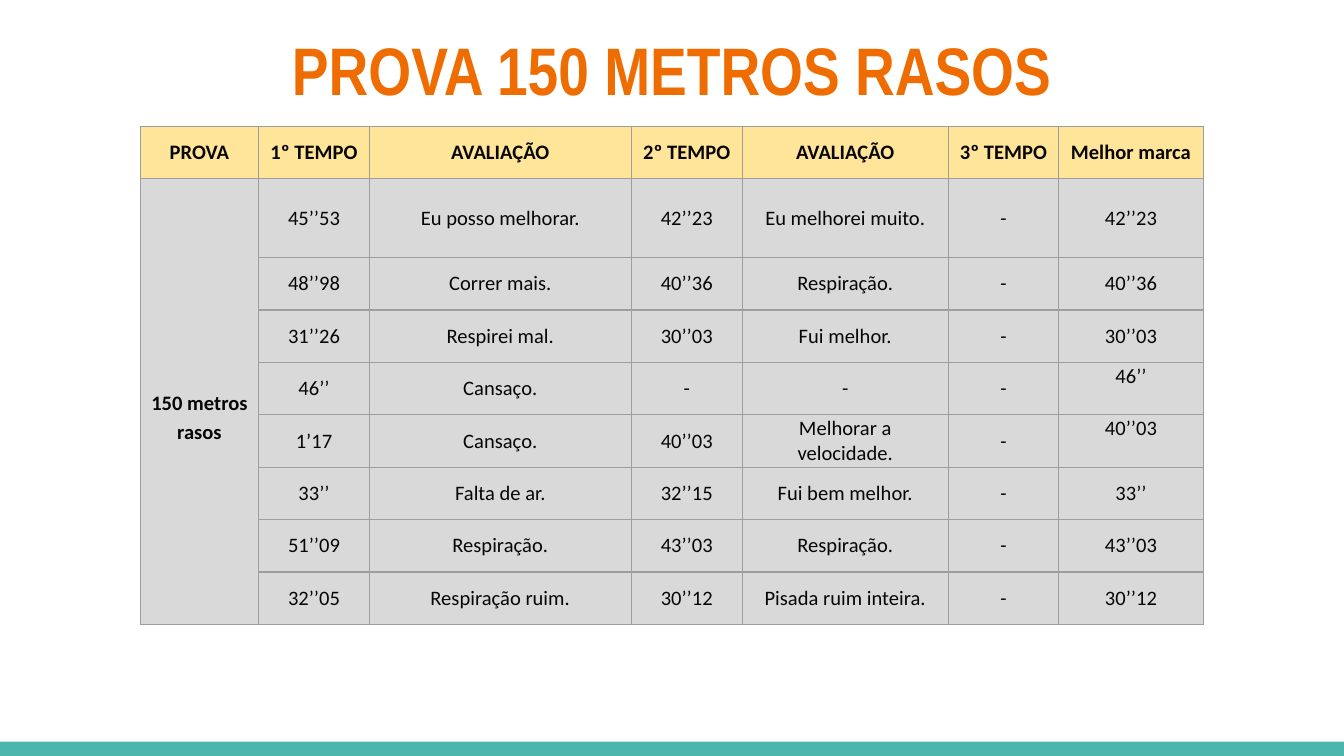
from lxml.etree import fromstring
from pptx import Presentation
from pptx.dml.color import RGBColor as RGB
from pptx.enum.shapes import MSO_SHAPE as SHAPE
from pptx.enum.text import MSO_ANCHOR as ANCHOR, PP_ALIGN as ALIGN
from pptx.util import Cm, Pt

TITLE = "PROVA 150 METROS RASOS"
HEADERS = ["PROVA", "1º TEMPO", "AVALIAÇÃO", "2º TEMPO", "AVALIAÇÃO",
           "3º TEMPO", "Melhor marca"]
EVENT = "150 metros rasos"
RESULTS = [
    ("45’’53", "Eu posso melhorar.", "42’’23", "Eu melhorei muito.", "-", "42’’23"),
    ("48’’98", "Correr mais.", "40’’36", "Respiração.", "-", "40’’36"),
    ("31’’26", "Respirei mal.", "30’’03", "Fui melhor.", "-", "30’’03"),
    ("46’’", "Cansaço.", "-", "-", "-", "46’’"),
    ("1’17", "Cansaço.", "40’’03", "Melhorar a velocidade.", "-", "40’’03"),
    ("33’’", "Falta de ar.", "32’’15", "Fui bem melhor.", "-", "33’’"),
    ("51’’09", "Respiração.", "43’’03", "Respiração.", "-", "43’’03"),
    ("32’’05", "Respiração ruim.", "30’’12", "Pisada ruim inteira.", "-", "30’’12"),
]

COLORS = {"title": "EF6C00", "text": "070605", "header": "FFE599",
          "body": "D9D9D9", "border": "9E9E9E", "footer": "4DB6AC"}
TITLE_FONT = {"name": "Arial Narrow", "size": Pt(36), "bold": True}
HEADER_FONT = {"name": "Calibri", "size": Pt(11), "bold": True}
BODY_FONT = {**HEADER_FONT, "bold": False}
CELL_FORMAT = {"vertical_anchor": ANCHOR.MIDDLE, "margin_left": Cm(0.2),
               "margin_right": Cm(0.2), "margin_top": 0, "margin_bottom": 0}
RAISED = {"margin_bottom": Cm(0.47)}
LOWERED = {"margin_top": Cm(0.54)}
RAISED_CELLS = {(4, 6), (5, 6)}

SLIDE_W, SLIDE_H = 25.4, 14.29
FOOTER_H = 0.27
TABLE_LEFT, TABLE_TOP = 2.65, 2.39
COLUMN_WIDTHS = [2.24, 2.09, 4.95, 2.1, 3.89, 2.09, 2.73]
ROW_HEIGHT, TALL_ROW = 0.99, 1.49
ROW_HEIGHTS = [ROW_HEIGHT, TALL_ROW] + [ROW_HEIGHT] * (len(RESULTS) - 1)
DRAWING_NS = "http://schemas.openxmlformats.org/drawingml/2006/main"


def apply(target, formats):
    for attribute, value in formats.items():
        setattr(target, attribute, value)


def write(frame, text, font, color):
    """Put one centred paragraph into a text frame."""
    paragraph = frame.paragraphs[0]
    paragraph.alignment = ALIGN.CENTER
    run = paragraph.add_run()
    run.text = text
    apply(run.font, font)
    run.font.color.rgb = RGB.from_string(COLORS[color])
    return paragraph


def add_borders(cell):
    properties = cell._tc.get_or_add_tcPr()
    for position, side in enumerate("LRTB"):
        properties.insert(position, fromstring(
            f'<a:ln{side} xmlns:a="{DRAWING_NS}" w="{Pt(0.75)}"><a:solidFill>'
            f'<a:srgbClr val="{COLORS["border"]}"/></a:solidFill></a:ln{side}>'))


def paint(fill, color):
    fill.solid()
    fill.fore_color.rgb = RGB.from_string(COLORS[color])


def add_results_table(slide):
    rows = [HEADERS] + [(EVENT if i == 0 else "", *result)
                        for i, result in enumerate(RESULTS)]
    table = slide.shapes.add_table(
        len(rows), len(HEADERS), Cm(TABLE_LEFT), Cm(TABLE_TOP),
        Cm(sum(COLUMN_WIDTHS)), Cm(sum(ROW_HEIGHTS))).table
    for column, width in zip(table.columns, COLUMN_WIDTHS):
        column.width = Cm(width)
    for row, height in zip(table.rows, ROW_HEIGHTS):
        row.height = Cm(height)

    for r, row in enumerate(rows):
        for c, text in enumerate(row):
            cell = table.cell(r, c)
            apply(cell, CELL_FORMAT)
            if (r, c) in RAISED_CELLS:
                apply(cell, RAISED)
            paint(cell.fill, "body" if r else "header")
            add_borders(cell)
            if text:
                font = BODY_FONT if r and c else HEADER_FONT
                write(cell.text_frame, text, font, "text")

    event = table.cell(1, 0)
    event.merge(table.cell(len(RESULTS), 0))
    apply(event, LOWERED)
    event.text_frame.paragraphs[0].line_spacing = 1.15


def main():
    deck = Presentation()
    deck.slide_width, deck.slide_height = Cm(SLIDE_W), Cm(SLIDE_H)
    slide = deck.slides.add_slide(deck.slide_layouts[6])

    footer = slide.shapes.add_shape(
        SHAPE.RECTANGLE, 0, Cm(SLIDE_H - FOOTER_H), Cm(SLIDE_W), Cm(FOOTER_H))
    footer.shadow.inherit = False
    paint(footer.fill, "footer")
    footer.line.fill.background()

    title = slide.shapes.add_textbox(Cm(0.86), Cm(0.28), Cm(23.67), Cm(1.96)).text_frame
    apply(title, {"word_wrap": True, "margin_left": Cm(0.25), "margin_right": Cm(0.25),
                  "margin_top": Cm(0.25), "margin_bottom": Cm(0.25)})
    write(title, TITLE, TITLE_FONT, "title")

    add_results_table(slide)
    deck.save("out.pptx")


if __name__ == "__main__":
    main()
